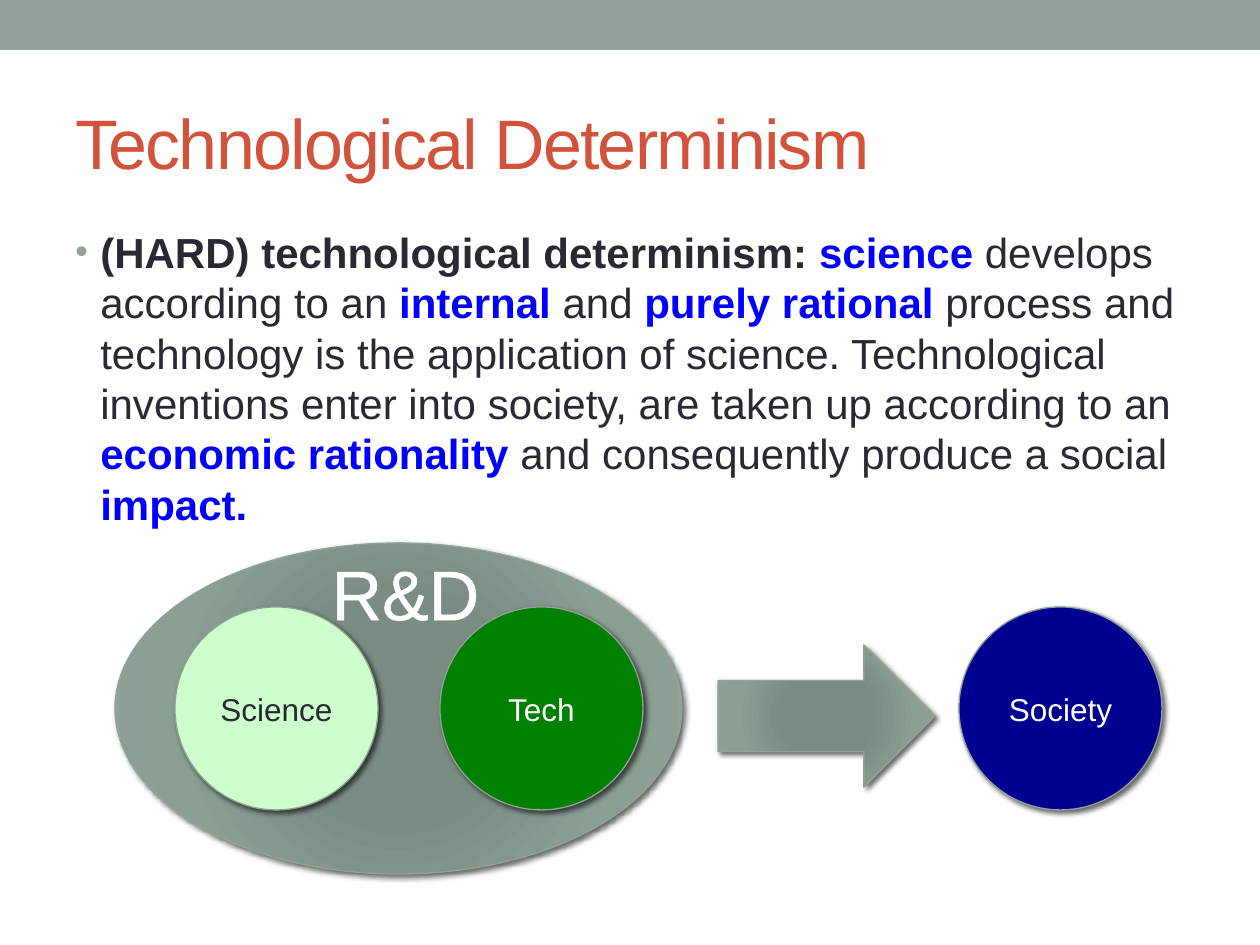
import pptx
import pptx.util
import pptx.oxml
import pptx.dml.color
import pptx.enum.shapes
import pptx.enum.text

PX = 914400 / 126
NS = 'xmlns:a="http://schemas.openxmlformats.org/drawingml/2006/main"'
SHAPE = pptx.enum.shapes.MSO_SHAPE
ALIGN = pptx.enum.text.PP_ALIGN
ANCHOR = pptx.enum.text.MSO_ANCHOR
COLORS = {
    "sage": "93A299", "title": "D2533C", "text": "292934", "accent": "0000FF",
    "mint": "CCFFCC", "green": "008000", "navy": "000090", "white": "FFFFFF",
}
GRADIENT = [(0, "7B8E82"), (34, "7B8D83"), (70, "8A9E92"), (100, COLORS["sage"])]


def style_span(span, size, color, bold=False):
    span.font.name = "Arial"
    span.font.size = pptx.util.Pt(size)
    span.font.bold = bold
    span.font.color.rgb = pptx.dml.color.RGBColor.from_string(COLORS[color])


def add_raised(kind, bounds, color=None):
    """Add a thin-lined shape with a soft shadow; without a color it gets the gradient."""
    shape = slide.shapes.add_shape(kind, *[round(v * PX) for v in bounds])
    shape.line.color.rgb = pptx.dml.color.RGBColor.from_string(COLORS["sage"])
    shape.line.width = pptx.util.Pt(0.75)
    shape.shadow.inherit = False
    properties = shape._element.spPr
    if color:
        shape.fill.solid()
        shape.fill.fore_color.rgb = pptx.dml.color.RGBColor.from_string(COLORS[color])
    else:
        stops = "".join(f'<a:gs pos="{pos * 1000}"><a:srgbClr val="{tone}"/></a:gs>'
                        for pos, tone in GRADIENT)
        properties.insert(2, pptx.oxml.parse_xml(
            f'<a:gradFill {NS} rotWithShape="1"><a:gsLst>{stops}</a:gsLst><a:path path="circle">'
            '<a:fillToRect l="100000" t="100000" r="100000" b="100000"/></a:path></a:gradFill>'))
    properties[-1].append(pptx.oxml.parse_xml(
        f'<a:outerShdw {NS} blurRad="38100" dist="25400" dir="2700000" rotWithShape="0">'
        '<a:srgbClr val="000000"><a:alpha val="60000"/></a:srgbClr></a:outerShdw>'))
    return shape


deck = pptx.Presentation()
deck.slide_width = round(1260 * PX)
deck.slide_height = round(945 * PX)
slide = deck.slides.add_slide(deck.slide_layouts[6])

# Top band
band = slide.shapes.add_shape(SHAPE.RECTANGLE, 0, 0, deck.slide_width, round(50 * PX))
band.shadow.inherit = False
band.fill.solid()
band.fill.fore_color.rgb = pptx.dml.color.RGBColor.from_string(COLORS["sage"])
band.line.fill.background()

# Large R&D ellipse
add_raised(SHAPE.OVAL, (115, 543, 567, 331))

# Title
title = slide.shapes.add_textbox(*[round(v * PX) for v in (63, 73, 1134, 136)])
title.text_frame.word_wrap = True
title.text_frame.vertical_anchor = ANCHOR.MIDDLE
title.text_frame.text = "Technological Determinism"
span = title.text_frame.paragraphs[0].runs[0]
style_span(span, 40, "title")
span._r.get_or_add_rPr().set("spc", "-100")

# Bulleted definition
body = slide.shapes.add_textbox(*[round(v * PX) for v in (63, 220, 1134, 672)])
body.text_frame.word_wrap = True
para = body.text_frame.paragraphs[0]
para.line_spacing = pptx.util.Pt(28.8)
for text, color, bold in [
    ("(HARD) technological determinism: ", "text", True),
    ("science", "accent", True),
    (" develops according to an ", "text", False),
    ("internal ", "accent", True),
    ("and ", "text", False),
    ("purely rational ", "accent", True),
    ("process and technology is the application of science. Technological inventions "
     "enter into society, are taken up according to an ", "text", False),
    ("economic rationality", "accent", True),
    (" and consequently produce a social ", "text", False),
    ("impact.", "accent", True),
]:
    span = para.add_run()
    span.text = text
    style_span(span, 24, color, bold)
bullet = para._p.get_or_add_pPr()
bullet.set("marL", str(round(25 * PX)))
bullet.set("indent", str(round(-25 * PX)))
for tag in (f'<a:buClr {NS}><a:srgbClr val="{COLORS["sage"]}"/></a:buClr>',
            f'<a:buSzPct {NS} val="85000"/>',
            f'<a:buFont {NS} typeface="Arial"/>',
            f'<a:buChar {NS} char="•"/>'):
    bullet.append(pptx.oxml.parse_xml(tag))

# Arrow and the three circles
add_raised(SHAPE.RIGHT_ARROW, (718, 645, 217, 142))
for label, left, fill, ink in [("Science", 175, "mint", "text"),
                               ("Tech", 440, "green", "white"),
                               ("Society", 959, "navy", "white")]:
    circle = add_raised(SHAPE.OVAL, (left, 607, 203, 203), fill)
    circle.text_frame.vertical_anchor = ANCHOR.MIDDLE
    circle.text_frame.text = label
    para = circle.text_frame.paragraphs[0]
    para.alignment = ALIGN.CENTER
    style_span(para.runs[0], 18, ink)

# Outlined R&D label
label_box = slide.shapes.add_textbox(*[round(v * PX) for v in (318, 544, 175, 97)])
label_box.text_frame.word_wrap = False
label_box.text_frame.text = "R&D"
para = label_box.text_frame.paragraphs[0]
para.alignment = ALIGN.CENTER
style_span(para.runs[0], 40, "white")
para.runs[0]._r.get_or_add_rPr().insert(0, pptx.oxml.parse_xml(
    f'<a:ln {NS} w="18415"><a:solidFill><a:srgbClr val="{COLORS["white"]}"/></a:solidFill></a:ln>'))

deck.save("out.pptx")
